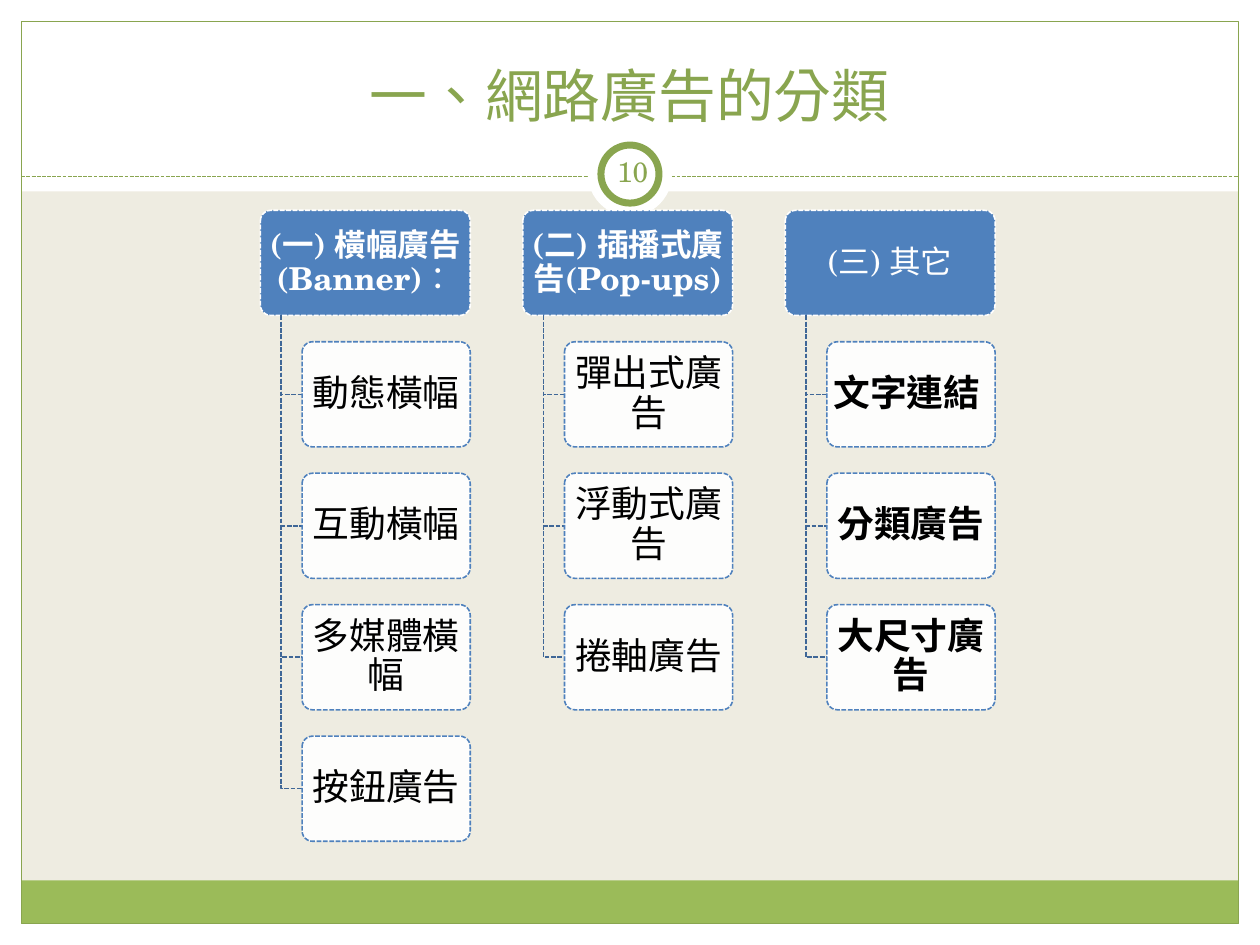
from dataclasses import dataclass

from lxml import etree
from pptx import Presentation
from pptx.dml.color import RGBColor
from pptx.enum.dml import MSO_LINE
from pptx.enum.lang import MSO_LANGUAGE_ID
from pptx.enum.shapes import MSO_CONNECTOR, MSO_SHAPE
from pptx.enum.text import MSO_ANCHOR, PP_ALIGN
from pptx.oxml.ns import qn
from pptx.util import Cm, Pt

RECT, ROUNDED, OVAL = MSO_SHAPE.RECTANGLE, MSO_SHAPE.ROUNDED_RECTANGLE, MSO_SHAPE.OVAL
STRAIGHT = MSO_CONNECTOR.STRAIGHT
DASHED = MSO_LINE.SQUARE_DOT
CENTER = PP_ALIGN.CENTER
MIDDLE, BOTTOM = MSO_ANCHOR.MIDDLE, MSO_ANCHOR.BOTTOM
CHINESE = MSO_LANGUAGE_ID.TRADITIONAL_CHINESE


@dataclass(frozen=True)
class Theme:
    font: str = "TeX Gyre Schola"
    background: str = "EEECE1"
    white: str = "FFFFFF"
    black: str = "000000"
    green: str = "89A54F"
    band: str = "9BBB59"
    blue: str = "4F81BD"
    branch: str = "3F6797"
    title_size: float = 33
    number_size: float = 16
    heading_size: float = 18
    item_size: float = 21
    thin: float = 0.75
    dash: float = 0.9
    ring: float = 4


THEME = Theme()

SLIDE_W, SLIDE_H, MARGIN = 25.4, 19.05, 0.43
HEADER_H, RULE_Y = 3.86, 3.56
BADGE_X, BADGE_Y = 12.7, 3.51

TREE_LEFT, TREE_TOP = 5.25, 4.24
COLUMN_STEP, ROW_STEP = 5.29, 2.65
HEADING_W, BOX_H, BRANCH_W = 4.23, 2.12, 0.42
ITEM_W = HEADING_W - 2 * BRANCH_W

# Each category: heading runs as (text, bold), whether its items are bold, items
CATEGORIES = [
    ([("(一) 橫幅廣告(Banner)", True), ("：", False)], False,
     ["動態橫幅", "互動橫幅", "多媒體橫幅", "按鈕廣告"]),
    ([("(二) 插播式廣告(Pop-ups)", True)], False,
     ["彈出式廣告", "浮動式廣告", "捲軸廣告"]),
    ([("(三) 其它", False)], True,
     ["文字連結 ", "分類廣告", "大尺寸廣告"]),
]


def color(value):
    return RGBColor.from_string(value)


def set_line(line, value, width, dash=None):
    line.color.rgb = color(value)
    line.width = Pt(width)
    if dash is not None:
        line.dash_style = dash


def add_panel(slide, kind, box, fill=None, line=None, width=THEME.thin, dash=None):
    """Add a preset shape; box is left, top, width, height in centimetres."""
    panel = slide.shapes.add_shape(kind, *map(Cm, box))
    panel.shadow.inherit = False
    if fill:
        panel.fill.solid()
        panel.fill.fore_color.rgb = color(fill)
    else:
        panel.fill.background()
    if line:
        set_line(panel.line, line, width, dash)
    else:
        panel.line.fill.background()
    return panel


def set_opacity(shape, percent):
    fill_color = shape.fill._xPr.find(qn("a:solidFill"))[0]
    etree.SubElement(fill_color, qn("a:alpha"), val=str(percent * 1000))


def write(frame, runs, size, text_color, anchor=MIDDLE, inset=(0.13, 0.13), spacing=None):
    """Fill a text frame with one centred paragraph of (text, bold) runs."""
    frame.word_wrap = True
    frame.vertical_anchor = anchor
    frame.margin_left = frame.margin_right = Cm(inset[0])
    frame.margin_top = frame.margin_bottom = Cm(inset[1])
    paragraph = frame.paragraphs[0]
    paragraph.alignment = CENTER
    paragraph.line_spacing = spacing
    for text, bold in runs:
        run = paragraph.add_run()
        run.text = text
        run.font.name = THEME.font
        run.font.size = Pt(size)
        run.font.bold = bold
        run.font.color.rgb = color(text_color)
        run.font.language_id = CHINESE


def add_label(slide, box, text, size, **layout):
    label = slide.shapes.add_textbox(*map(Cm, box))
    write(label.text_frame, [(text, False)], size, THEME.green, **layout)


def add_circle(slide, diameter, **style):
    radius = diameter / 2
    add_panel(slide, OVAL, (BADGE_X - radius, BADGE_Y - radius, diameter, diameter),
              THEME.white, **style)


def add_frame(slide):
    for edge in [
        (0, SLIDE_H - MARGIN, SLIDE_W, MARGIN),
        (0, 0, SLIDE_W, HEADER_H),
        (0, 0, MARGIN, SLIDE_H),
        (SLIDE_W - MARGIN, 0, MARGIN, SLIDE_H),
    ]:
        add_panel(slide, RECT, edge, THEME.white)
    inner_w, inner_h = SLIDE_W - 2 * MARGIN, SLIDE_H - 2 * MARGIN
    add_panel(slide, RECT, (MARGIN, 17.75, inner_w, 0.87), THEME.band)
    add_panel(slide, RECT, (MARGIN, MARGIN, inner_w, inner_h), line=THEME.green)
    rule = slide.shapes.add_connector(
        STRAIGHT, Cm(MARGIN), Cm(RULE_Y), Cm(SLIDE_W - MARGIN), Cm(RULE_Y))
    set_line(rule.line, THEME.green, THEME.thin, DASHED)
    etree.SubElement(rule._element.spPr, qn("a:effectLst"))
    add_circle(slide, 1.7)
    add_circle(slide, 1.17, line=THEME.green, width=THEME.ring)


def add_node(slide, box, runs, fill, line, size, text_color):
    node = add_panel(slide, ROUNDED, box, fill, line, THEME.dash, DASHED)
    node.adjustments[0] = 0.1
    write(node.text_frame, runs, size, text_color, inset=(0.04, 0.03), spacing=0.9)
    return node


def add_branch(slide, x, top, bottom):
    """Draw an elbow down from a heading and right to an item."""
    builder = slide.shapes.build_freeform(Cm(x), Cm(top))
    builder.add_line_segments(
        [(Cm(x), Cm(bottom)), (Cm(x + BRANCH_W), Cm(bottom))], close=False)
    branch = builder.convert_to_shape()
    branch.shadow.inherit = False
    branch.fill.background()
    set_line(branch.line, THEME.branch, THEME.dash, DASHED)


def add_category(slide, left, heading, bold_items, items):
    add_node(slide, (left, TREE_TOP, HEADING_W, BOX_H), heading,
             THEME.blue, THEME.white, THEME.heading_size, THEME.white)
    for row, item in enumerate(items, start=1):
        top = TREE_TOP + row * ROW_STEP
        add_branch(slide, left + BRANCH_W, TREE_TOP + BOX_H, top + BOX_H / 2)
        node = add_node(slide, (left + 2 * BRANCH_W, top, ITEM_W, BOX_H),
                        [(item, bold_items)], THEME.white, THEME.blue,
                        THEME.item_size, THEME.black)
        set_opacity(node, 90)


def main():
    deck = Presentation()
    deck.slide_width, deck.slide_height = Cm(SLIDE_W), Cm(SLIDE_H)
    slide = deck.slides.add_slide(deck.slide_layouts[6])
    slide.background.fill.solid()
    slide.background.fill.fore_color.rgb = color(THEME.background)
    add_frame(slide)
    add_label(slide, (0.84, 0.64, 23.7, 2.1), "一、網路廣告的分類",
              THEME.title_size, anchor=BOTTOM, inset=(0.25, 0.13))
    add_label(slide, (12.12, 2.84, 1.27, 1.22), "10", THEME.number_size)
    for column, category in enumerate(CATEGORIES):
        add_category(slide, TREE_LEFT + column * COLUMN_STEP, *category)
    deck.save("out.pptx")


if __name__ == "__main__":
    main()
